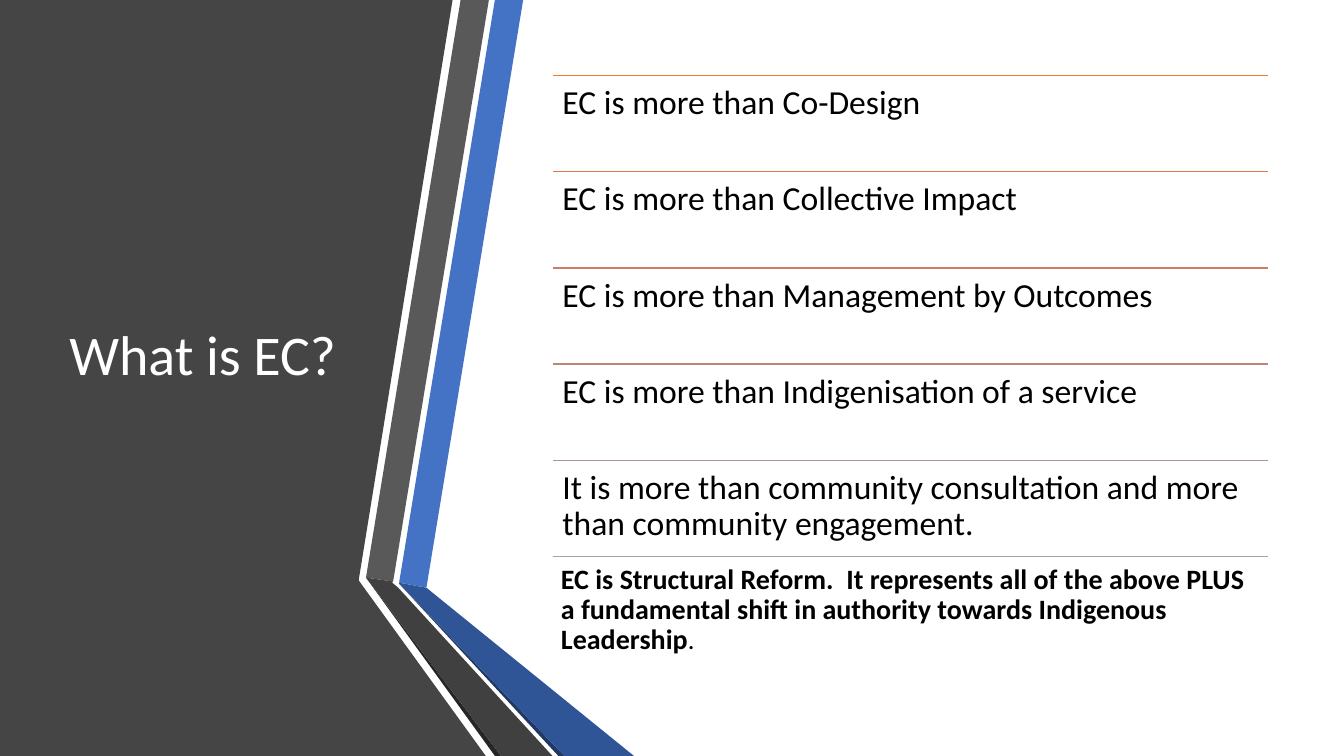
import dataclasses

import pptx
import pptx.dml.color
import pptx.enum.shapes
import pptx.enum.text
import pptx.oxml.xmlchemy
import pptx.util
from lxml import etree
from pptx.oxml import ns


@dataclasses.dataclass(frozen=True)
class Theme:
    font: str = "Calibri"
    title_size: float = 40
    item_size: float = 24
    conclusion_size: float = 20
    full_stop_size: float = 19
    title_color: str = "FFFFFF"
    text_color: str = "000000"
    panel: str = "454545"
    blue: str = "4472C4"
    blue_fold: str = "2F5597"
    blue_shadow: str = "203864"
    gray: str = "595959"
    gray_fold: str = "404040"
    gray_shadow: str = "262626"
    rules: tuple = ("ED7D31", "DC7A4B", "CC7D64", "BD867B", "B09391", "A5A5A5")


def rgb(color):
    return pptx.dml.color.RGBColor.from_string(color)


def add_text(paragraph, text, *, font, size, color, bold=False):
    run = paragraph.add_run()
    run.text = text
    run.font.name = font
    run.font.size = pptx.util.Pt(size)
    run.font.bold = bold
    run.font.color.rgb = rgb(color)


class SlideBuilder:
    def __init__(self, slide, theme):
        self.slide = slide
        self.theme = theme

    def polygon(self, points, color):
        vertices = [(pptx.util.Pt(x), pptx.util.Pt(y)) for x, y in points]
        builder = self.slide.shapes.build_freeform(*vertices[0])
        builder.add_line_segments(vertices[1:], close=True)
        shape = builder.convert_to_shape()
        shape.shadow.inherit = False
        shape.fill.solid()
        shape.fill.fore_color.rgb = rgb(color)
        shape.line.fill.background()

    def rule(self, left, top, width, color):
        connector = self.slide.shapes.add_connector(
            pptx.enum.shapes.MSO_CONNECTOR.STRAIGHT,
            pptx.util.Pt(left), pptx.util.Pt(top),
            pptx.util.Pt(left + width), pptx.util.Pt(top),
        )
        connector.line.color.rgb = rgb(color)
        connector.line.width = pptx.util.Pt(1)
        etree.SubElement(connector._element.spPr, ns.qn("a:effectLst"))

    def text_box(self, left, top, width, height, runs, *, inset, space_after=0,
                 anchor=pptx.enum.text.MSO_ANCHOR.TOP):
        shape = self.slide.shapes.add_textbox(
            pptx.util.Pt(left), pptx.util.Pt(top),
            pptx.util.Pt(width), pptx.util.Pt(height),
        )
        frame = shape.text_frame
        frame.word_wrap = True
        frame.vertical_anchor = anchor
        horizontal, vertical = inset
        frame.margin_left = frame.margin_right = pptx.util.Pt(horizontal)
        frame.margin_top = frame.margin_bottom = pptx.util.Pt(vertical)
        paragraph = frame.paragraphs[0]
        paragraph.line_spacing = 0.9
        paragraph.space_after = pptx.util.Pt(space_after)
        for text, style in runs:
            add_text(paragraph, text, font=self.theme.font, **style)


def draw_ribbons(builder):
    theme = builder.theme
    ribbons = [
        (theme.panel, [(0, 0), (323.3, 0), (256.3, 414), (256.3, 414.7),
                       (347, 540), (0, 540)]),
        (theme.blue, [(285.1, 416.2), (304.6, 419.8), (373.7, 0), (353.5, 0)]),
        (theme.gray, [(349.2, 0), (329, 0), (261.4, 412.6), (280.8, 415.4)]),
        (theme.gray_shadow, [(261.4, 412.6), (353.5, 540), (357.8, 540)]),
        (theme.blue_shadow, [(285.1, 416.9), (398.9, 540), (403.2, 540)]),
        (theme.blue_fold, [(285.1, 416.9), (403.2, 540), (452.9, 540),
                           (304.6, 419.8), (285.1, 416.2)]),
        (theme.gray_fold, [(394.6, 540), (284.4, 419.8), (280.1, 416.2),
                           (280.8, 415.4), (261.4, 412.6), (357.8, 540)]),
    ]
    for color, points in ribbons:
        builder.polygon(points, color)


def draw_statements(builder):
    theme = builder.theme
    left, top, width, pitch = 394.7, 54, 511.2, 68.7
    item_style = {"size": theme.item_size, "color": theme.text_color}
    items = [
        "EC is more than Co-Design",
        "EC is more than Collective Impact",
        "EC is more than Management by Outcomes",
        "EC is more than Indigenisation of a service",
        "It is more than community consultation and more than community engagement.",
    ]
    statements = [([(item, item_style)], 7.2) for item in items]
    conclusion = [
        ("EC is Structural Reform.  It represents all of the above PLUS a fundamental "
         "shift in authority towards Indigenous Leadership",
         {"size": theme.conclusion_size, "color": theme.text_color, "bold": True}),
        (".", {"size": theme.full_stop_size, "color": theme.text_color}),
    ]
    statements.append((conclusion, 6))
    for index, ((runs, inset), color) in enumerate(zip(statements, theme.rules)):
        row_top = top + index * pitch
        builder.rule(left, row_top, width, color)
        builder.text_box(left, row_top, width, pitch, runs, inset=(inset, inset),
                         space_after=0.35 * runs[0][1]["size"])


def main():
    presentation = pptx.Presentation()
    presentation.slide_width = pptx.util.Pt(960)
    presentation.slide_height = pptx.util.Pt(540)
    slide = presentation.slides.add_slide(presentation.slide_layouts[6])
    theme = Theme()
    builder = SlideBuilder(slide, theme)
    draw_ribbons(builder)
    title_style = {"size": theme.title_size, "color": theme.title_color}
    builder.text_box(42.5, 54, 218.9, 401.8, [("What is EC?", title_style)],
                     inset=(7.2, 3.6), anchor=pptx.enum.text.MSO_ANCHOR.MIDDLE)
    draw_statements(builder)
    presentation.save("out.pptx")


if __name__ == "__main__":
    main()
